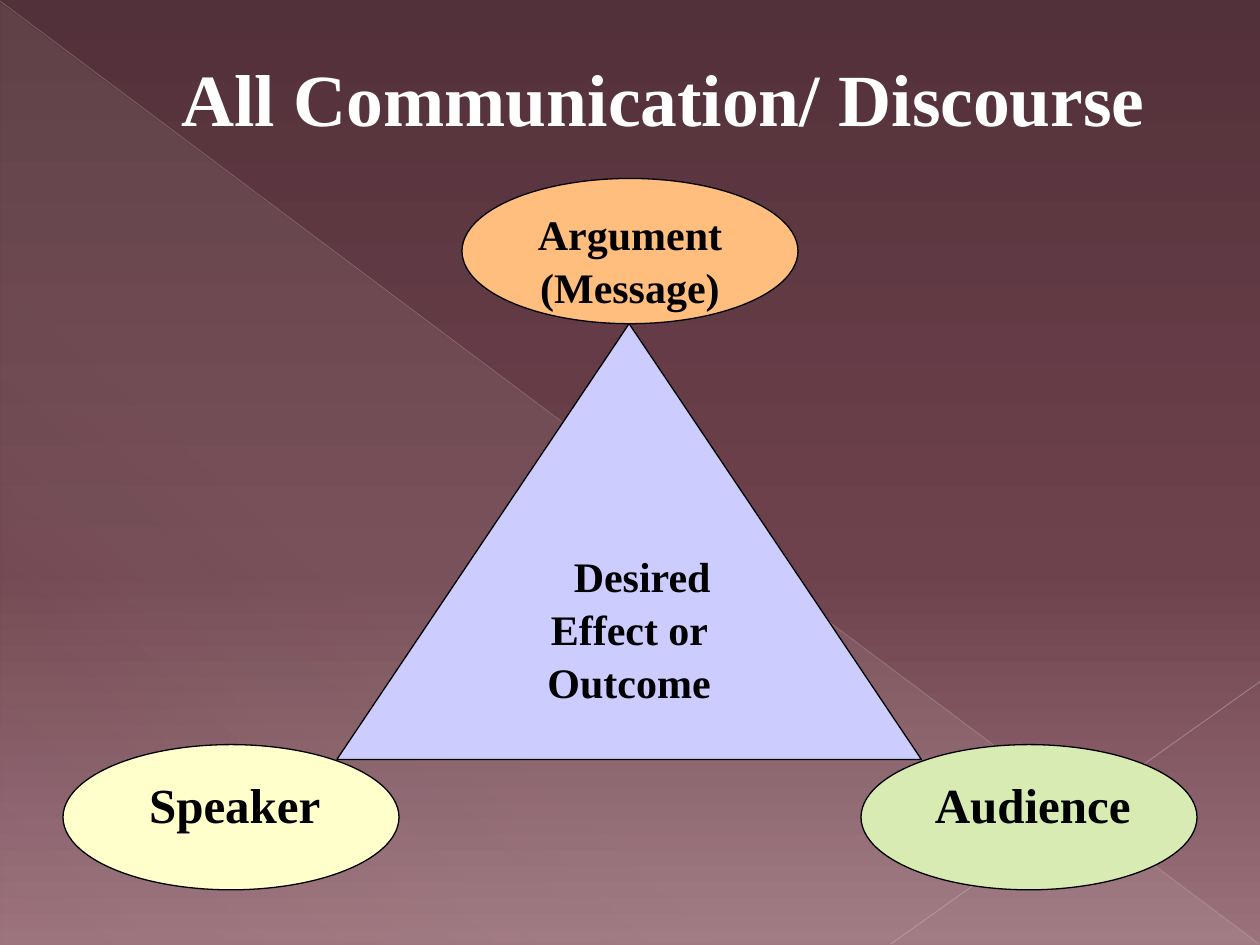
from lxml.etree import SubElement
from pptx import Presentation
from pptx.dml.color import RGBColor
from pptx.enum.shapes import MSO_CONNECTOR as Connector, MSO_SHAPE as Shape
from pptx.enum.text import MSO_ANCHOR as Anchor, PP_ALIGN as Align
from pptx.oxml.ns import qn
from pptx.util import Pt

WHITE = RGBColor(0xFF, 0xFF, 0xFF)
BLACK = RGBColor(0x00, 0x00, 0x00)
PLUM_DARK = RGBColor(0x53, 0x31, 0x3A)
PLUM = RGBColor(0x6E, 0x42, 0x4D)
PLUM_LIGHT = RGBColor(0x9B, 0x72, 0x7C)
SHEEN = RGBColor(0xEA, 0xEB, 0xDE)
LONG_LINE = RGBColor(0xC1, 0xB9, 0xBB)
SHORT_LINE = RGBColor(0xC8, 0xC1, 0xC2)
LAVENDER = RGBColor(0xCC, 0xCC, 0xFF)
YELLOW = RGBColor(0xFF, 0xFF, 0xCC)
ORANGE = RGBColor(0xFF, 0xBE, 0x7D)
GREEN = RGBColor(0xD8, 0xEB, 0xB3)

FONT = "Times New Roman"
OVAL_WIDTH, OVAL_HEIGHT = 192, 83
OVAL_TOP, OVAL_BOTTOM = 102, 425.5


def set_opacity(color_element, percent):
    SubElement(color_element, qn("a:alpha"), val=str(percent * 1000))


def set_gradient(fill, owner, stops, angle):
    fill.gradient()
    fill.gradient_angle = 360 - angle
    stop_list = owner.find(".//" + qn("a:gsLst"))
    for old_stop in list(stop_list):
        stop_list.remove(old_stop)
    for position, color, opacity in stops:
        stop = SubElement(stop_list, qn("a:gs"), pos=str(position * 1000))
        color_element = SubElement(stop, qn("a:srgbClr"), val=str(color))
        set_opacity(color_element, opacity)


def add_sheen(slide):
    shape = slide.shapes.add_shape(Shape.RIGHT_TRIANGLE, Pt(0.5), Pt(1.5), Pt(719.5), Pt(538.5))
    shape.shadow.inherit = False
    shape.line.fill.background()
    stops = [(0, SHEEN, 10), (70, SHEEN, 8), (100, SHEEN, 1)]
    set_gradient(shape.fill, shape.element, stops, 133)


def add_line(slide, start, end, color, width, opacity):
    points = [Pt(value) for value in (*start, *end)]
    connector = slide.shapes.add_connector(Connector.STRAIGHT, *points)
    connector.line.width = Pt(width)
    connector.line.color.rgb = color
    set_opacity(connector.element.find(".//" + qn("a:ln")).find(".//" + qn("a:srgbClr")), opacity)
    SubElement(connector.element.spPr, qn("a:effectLst"))


def write_text(shape, text, size, color, align, margin=0, indent=0):
    shape.text_frame.word_wrap = True
    paragraph = shape.text_frame.paragraphs[0]
    paragraph.text = text
    paragraph.alignment = align
    paragraph.font.name = FONT
    paragraph.font.size = Pt(size)
    paragraph.font.bold = True
    paragraph.font.color.rgb = color
    properties = paragraph._p.get_or_add_pPr()
    properties.set("marL", str(Pt(margin)))
    properties.set("indent", str(Pt(indent)))
    return paragraph


def add_title(slide, text):
    box = slide.shapes.add_textbox(Pt(36), Pt(21), Pt(648), Pt(69))
    box.text_frame.vertical_anchor = Anchor.MIDDLE
    write_text(box, text, 42, WHITE, Align.CENTER, margin=38)


def add_figure(group, kind, box, fill, text, size, align, margin=0, indent=0):
    shape = group.shapes.add_shape(kind, *[Pt(value) for value in box])
    shape.shadow.inherit = False
    shape.fill.solid()
    shape.fill.fore_color.rgb = fill
    shape.line.color.rgb = BLACK
    shape.line.width = Pt(0.75)
    shape.text_frame.vertical_anchor = Anchor.TOP
    paragraph = write_text(shape, text, size, BLACK, align, margin, indent)
    paragraph.line_spacing = 1.05


def add_oval(group, left, top, fill, text, size, align, margin=0):
    box = (left, top, OVAL_WIDTH, OVAL_HEIGHT)
    add_figure(group, Shape.OVAL, box, fill, text, size, align, margin)


def main():
    presentation = Presentation()
    presentation.slide_width = Pt(720)
    presentation.slide_height = Pt(540)
    slide = presentation.slides.add_slide(presentation.slide_layouts[6])

    stops = [(0, PLUM_DARK, 100), (60, PLUM, 100), (100, PLUM_LIGHT, 100)]
    set_gradient(slide.background.fill, slide.element, stops, 90)
    add_sheen(slide)
    add_line(slide, (0, 0.5), (719.5, 539.5), LONG_LINE, 0.39, 35)
    add_line(slide, (720, 389.5), (509, 539.5), SHORT_LINE, 0.47, 45)
    add_title(slide, "All Communication/ Discourse")

    group = slide.shapes.add_group_shape()
    triangle_box = (192.5, OVAL_TOP + OVAL_HEIGHT, 334, 249)
    add_figure(group, Shape.ISOSCELES_TRIANGLE, triangle_box, LAVENDER,
               "Desired Effect or Outcome", 24, Align.CENTER, indent=15)
    add_oval(group, 36, OVAL_BOTTOM, YELLOW, "Speaker", 28, Align.LEFT, margin=14)
    add_oval(group, 264, OVAL_TOP, ORANGE, "Argument (Message)", 24, Align.CENTER)
    add_oval(group, 492, OVAL_BOTTOM, GREEN, "Audience", 28, Align.LEFT, margin=7)

    presentation.save("out.pptx")


if __name__ == "__main__":
    main()
